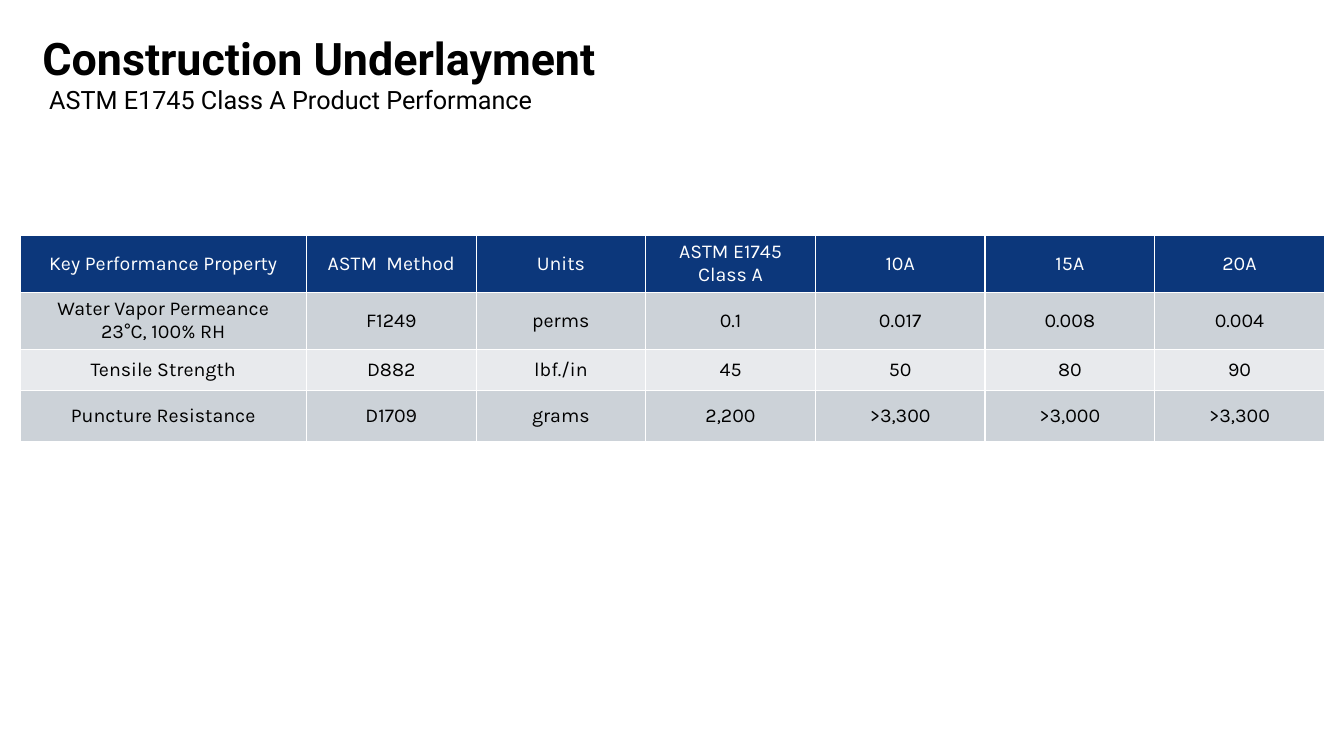
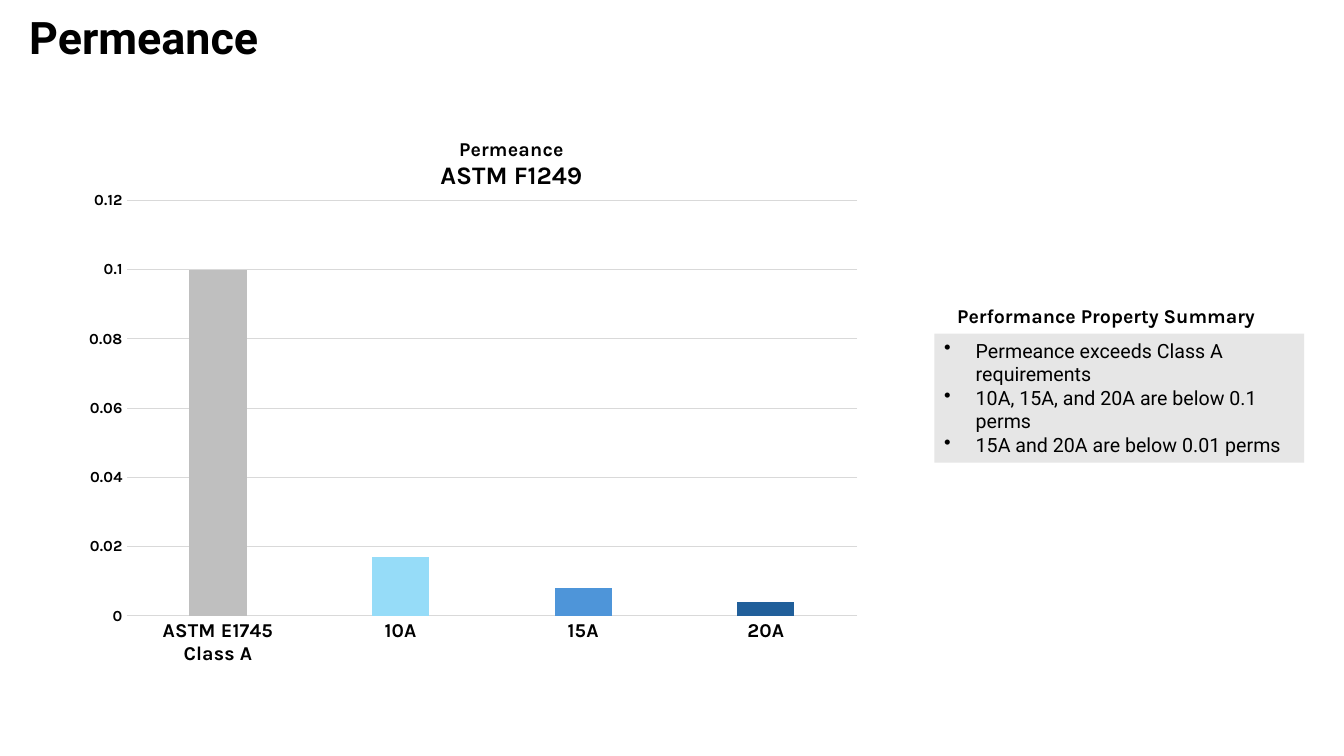
import lxml.etree
import pptx
import pptx.chart.data
import pptx.dml.color
import pptx.enum.chart
import pptx.enum.shapes
import pptx.enum.text
import pptx.oxml.ns
import pptx.util

Pt = pptx.util.Pt
qn = pptx.oxml.ns.qn
Align = pptx.enum.text.PP_ALIGN
Anchor = pptx.enum.text.MSO_ANCHOR
AutoSize = pptx.enum.text.MSO_AUTO_SIZE
Tick = pptx.enum.chart.XL_TICK_MARK

BLACK, WHITE = "000000", "FFFFFF"
NAVY, BAND_DARK, BAND_LIGHT = "0C377B", "CCD2D8", "E8EAED"
PANEL, GRID = "E6E6E6", "D9D9D9"
BAR_COLORS = ["BFBFBF", "96DCF8", "4E95D9", "215F9A"]
HEADING_FONT, DATA_FONT = "Roboto", "Karla"


def paint(fill, color):
    fill.solid()
    fill.fore_color.rgb = pptx.dml.color.RGBColor.from_string(color)


def write(frame, text, size=14, font=HEADING_FONT, bold=False, color=BLACK,
          align=Align.LEFT, spacing=None, bullet=None):
    for line in text.split("\n"):
        para = frame.paragraphs[0]
        if para.runs:
            para = frame.add_paragraph()
        para.alignment = align
        if spacing:
            para.line_spacing = spacing
        if bullet:
            properties = para._p.get_or_add_pPr()
            properties.set("marL", str(Pt(22.5)))
            properties.set("indent", str(-Pt(22.5)))
            mark = lxml.etree.SubElement(properties, qn("a:buChar"))
            mark.set("char", bullet)
        span = para.add_run()
        span.text = line
        span.font.size = Pt(size)
        span.font.name = font
        span.font.bold = bold
        paint(span.font.fill, color)


deck = pptx.Presentation()
deck.slide_width, deck.slide_height = Pt(960), Pt(540)

pages = []
for title, left, top in [("Construction Underlayment", 23, 22.3),
                         ("Permeance", 13.7, 7.9)]:
    page = deck.slides.add_slide(deck.slide_layouts[5])
    box = page.shapes.title
    box.left, box.top, box.width, box.height = Pt(left), Pt(top), Pt(908.6), Pt(57.6)
    box.text_frame.vertical_anchor = Anchor.TOP
    box.text_frame.auto_size = AutoSize.NONE
    write(box.text_frame, title, size=32, bold=True, spacing=0.9)
    pages.append(page)
table_page, chart_page = pages

box = table_page.shapes.add_textbox(Pt(28.1), Pt(56.9), Pt(521.3), Pt(28.8))
box.text_frame.word_wrap = True
write(box.text_frame, "ASTM E1745 Class A Product Performance", size=18)

table_rows = [
    ["Key Performance Property", "ASTM  Method", "Units", "ASTM E1745\nClass A",
     "10A", "15A", "20A"],
    ["Water Vapor Permeance\n23°C, 100% RH", "F1249", "perms", "0.1",
     "0.017", "0.008", "0.004"],
    ["Tensile Strength", "D882", "lbf./in", "45", "50", "80", "90"],
    ["Puncture Resistance", "D1709", "grams", "2,200", ">3,300", ">3,000", ">3,300"],
]
row_heights = [40, 40, 29.5, 36.5]
row_fills = [NAVY, BAND_DARK, BAND_LIGHT, BAND_DARK]
column_widths = [204.5] + [121.2] * 6

table = table_page.shapes.add_table(
    len(table_rows), len(column_widths), Pt(14.4), Pt(167.8),
    Pt(sum(column_widths)), Pt(sum(row_heights))).table
for column, width in zip(table.columns, column_widths):
    column.width = Pt(width)
for row, height, fill, texts in zip(table.rows, row_heights, row_fills, table_rows):
    row.height = Pt(height)
    for cell, text in zip(row.cells, texts):
        paint(cell.fill, fill)
        cell.vertical_anchor = Anchor.MIDDLE
        write(cell.text_frame, text, font=DATA_FONT, align=Align.CENTER,
              color=WHITE if fill == NAVY else BLACK)

data = pptx.chart.data.CategoryChartData()
data.categories = ["ASTM E1745\nClass A", "10A", "15A", "20A"]
data.add_series("Series 1", [0.1, 0.017, 0.008, 0.004])
chart = chart_page.shapes.add_chart(
    pptx.enum.chart.XL_CHART_TYPE.COLUMN_CLUSTERED,
    Pt(42.5), Pt(87.1), Pt(599.8), Pt(401), data).chart
chart.has_legend = False
chart.font.size = Pt(10)
chart.font.name = DATA_FONT
paint(chart.font.fill, BLACK)

chart.has_title = True
for text, size in [("Permeance", 14), ("ASTM F1249", 18)]:
    write(chart.chart_title.text_frame, text, size=size, font=DATA_FONT,
          bold=True, align=Align.CENTER)
chart.chart_title.include_in_layout = False

plot = chart.plots[0]
plot.gap_width = 219
plot.overlap = -27
plot.vary_by_categories = False
series = plot.series[0]
paint(series.format.fill, "E97132")
for index, color in enumerate(BAR_COLORS):
    paint(series.points[index].format.fill, color)

for axis, size in [(chart.category_axis, 14), (chart.value_axis, 11)]:
    axis.major_tick_mark = Tick.NONE
    axis.minor_tick_mark = Tick.NONE
    labels = axis.tick_labels.font
    labels.size = Pt(size)
    labels.bold = True
    labels.name = DATA_FONT
    paint(labels.fill, BLACK)
chart.value_axis.minimum_scale = 0
chart.value_axis.maximum_scale = 0.12
chart.value_axis.major_unit = 0.02
chart.value_axis.has_major_gridlines = True
chart.value_axis.format.line.fill.background()
for line in [chart.category_axis.format.line,
             chart.value_axis.major_gridlines.format.line]:
    paint(line.fill, GRID)
    line.width = Pt(0.75)

plot_area = chart._chartSpace.chart.plotArea
title_element = chart.chart_title._element
for parent, position, settings in [
    (plot_area, 0, {"layoutTarget": "inner", "xMode": "edge", "yMode": "edge",
                    "x": 0.08, "y": 0.14, "w": 0.87, "h": 0.74}),
    (title_element, 1, {"xMode": "edge", "yMode": "edge", "x": 0.45, "y": 0.02}),
]:
    for old in parent.findall(qn("c:layout")):
        parent.remove(old)
    layout = lxml.etree.Element(qn("c:layout"))
    manual = lxml.etree.SubElement(layout, qn("c:manualLayout"))
    for name, value in settings.items():
        lxml.etree.SubElement(manual, qn("c:" + name)).set("val", str(value))
    parent.insert(position, layout)

panel = chart_page.shapes.add_shape(
    pptx.enum.shapes.MSO_SHAPE.RECTANGLE, Pt(667.4), Pt(238.3), Pt(264.2), Pt(92.2))
panel.shadow.inherit = False
paint(panel.fill, PANEL)
panel.line.fill.background()
panel.text_frame.word_wrap = True
panel.text_frame.auto_size = AutoSize.SHAPE_TO_FIT_TEXT
panel.text_frame.vertical_anchor = Anchor.TOP
for point in ["Permeance exceeds Class A requirements",
              "10A, 15A, and 20A are below 0.1 perms",
              "15A and 20A are below 0.01 perms"]:
    write(panel.text_frame, point, bullet="•")

box = chart_page.shapes.add_textbox(Pt(658.1), Pt(213.8), Pt(264.2), Pt(24.5))
box.text_frame.word_wrap = True
write(box.text_frame, "Performance Property Summary", font=DATA_FONT, bold=True,
      align=Align.CENTER)

deck.save("out.pptx")
